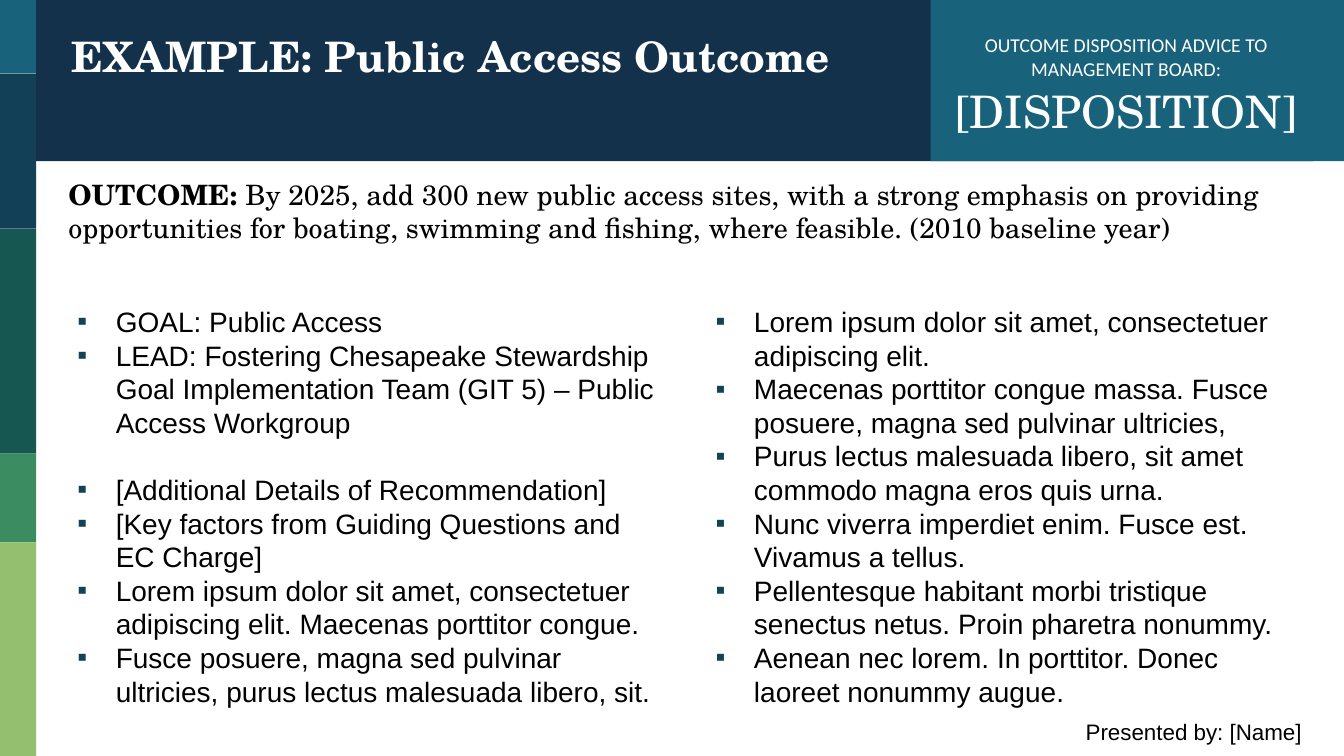
from dataclasses import dataclass

from lxml import etree
from pptx import Presentation
from pptx.dml.color import RGBColor
from pptx.enum.shapes import MSO_SHAPE
from pptx.enum.text import PP_ALIGN
from pptx.oxml.ns import qn
from pptx.util import Inches, Pt

RECT = MSO_SHAPE.RECTANGLE
LEFT, CENTER, RIGHT = PP_ALIGN.LEFT, PP_ALIGN.CENTER, PP_ALIGN.RIGHT


@dataclass(frozen=True)
class Theme:
    white: str = "FFFFFF"
    black: str = "000000"
    navy: str = "13314B"
    teal: str = "18637B"
    bullet: str = "114454"
    serif: str = "TeX Gyre Schola"
    sans: str = "Arial"
    label: str = "Calibri"
    title: int = 30
    rating: int = 32
    body: int = 20
    credit: int = 16
    small: int = 14


THEME = Theme()
STRIPES = (("18637B", 0.73), ("124057", 1.54), ("165751", 2.23),
           ("3B8D61", 0.88), ("94BF6E", 2.12))
PAD = (0.13, 0.07)
HEAD = {"line_spacing": 1.05, "space_after": Pt(13.3)}
ITEM = {"line_spacing": Pt(24)}
GAP = {"space_before": Pt(24)}

DETAILS = (
    ("GOAL: Public Access", {}),
    ("LEAD: Fostering Chesapeake Stewardship Goal Implementation Team "
     "(GIT 5) – Public Access Workgroup", {}),
    ("[Additional Details of Recommendation]", GAP),
    ("[Key factors from Guiding Questions and EC Charge]", {}),
    ("Lorem ipsum dolor sit amet, consectetuer adipiscing elit. "
     "Maecenas porttitor congue.", {}),
    ("Fusce posuere, magna sed pulvinar ultricies, purus lectus "
     "malesuada libero, sit.", {}),
)
FACTORS = (
    ("Lorem ipsum dolor sit amet, consectetuer adipiscing elit.", {}),
    ("Maecenas porttitor congue massa. Fusce posuere, magna sed "
     "pulvinar ultricies,", {}),
    ("Purus lectus malesuada libero, sit amet commodo magna eros "
     "quis urna.", {}),
    ("Nunc viverra imperdiet enim. Fusce est. Vivamus a tellus.", {}),
    ("Pellentesque habitant morbi tristique senectus netus. "
     "Proin pharetra nonummy.", {}),
    ("Aenean nec lorem. In porttitor. Donec laoreet nonummy augue.", {}),
)


def apply(target, values):
    for name, value in values.items():
        setattr(target, name, value)


def add_block(slide, box, color):
    block = slide.shapes.add_shape(RECT, *map(Inches, box))
    block.shadow.inherit = False
    block.fill.solid()
    block.fill.fore_color.rgb = RGBColor.from_string(color)
    block.line.fill.background()


def add_frame(slide, box, pad=(0.1, 0.05)):
    frame = slide.shapes.add_textbox(*map(Inches, box)).text_frame
    across, down = map(Inches, pad)
    apply(frame, {"word_wrap": True,
                  "margin_left": across, "margin_right": across,
                  "margin_top": down, "margin_bottom": down})
    return frame


def add_run(para, text, size, font, color, bold=False):
    run = para.add_run()
    run.text = text
    apply(run.font, {"size": Pt(size), "name": font, "bold": bold})
    run.font.color.rgb = RGBColor.from_string(color)


def add_text(slide, box, runs, pad=(0.1, 0.05), align=LEFT, style=None):
    """Add one paragraph made of runs of (text, size, font, color, bold)."""
    para = add_frame(slide, box, pad).paragraphs[0]
    apply(para, {"alignment": align, **(style or {})})
    for run in runs:
        add_run(para, *run)


def set_bullet(para):
    props = para._p.get_or_add_pPr()
    indent = Inches(0.38)
    props.set("marL", str(indent))
    props.set("indent", str(-indent))
    color = etree.SubElement(props, qn("a:buClr"))
    etree.SubElement(color, qn("a:srgbClr"), val=THEME.bullet)
    etree.SubElement(props, qn("a:buFont"), typeface=THEME.sans)
    etree.SubElement(props, qn("a:buChar"), char="▪")


def add_list(slide, box, items):
    frame = add_frame(slide, box, (0.1, 0.1))
    for index, (text, style) in enumerate(items):
        para = frame.add_paragraph() if index else frame.paragraphs[0]
        apply(para, {**ITEM, **style})
        set_bullet(para)
        add_run(para, text, THEME.body, THEME.sans, THEME.black)


def add_stripes(slide):
    top = 0
    for color, height in STRIPES:
        add_block(slide, (0, top, 0.36, height), color)
        top += height


def add_header(slide):
    add_block(slide, (0.36, 0, 12.67, 1.6), THEME.navy)
    add_text(slide, (0.58, 0.21, 8.5, 1.26),
             [("EXAMPLE: Public Access Outcome", THEME.title, THEME.serif,
               THEME.white, True)], PAD, style=HEAD)
    add_block(slide, (9.23, 0, 4.1, 1.6), THEME.teal)
    add_text(slide, (9.33, 0.24, 3.68, 1.18),
             [("OUTCOME DISPOSITION ADVICE TO MANAGEMENT BOARD: ",
               THEME.small, THEME.label, THEME.white),
              ("[DISPOSITION]", THEME.rating, THEME.serif, THEME.white)],
             PAD, CENTER, HEAD)


def main():
    deck = Presentation()
    apply(deck, {"slide_width": Inches(13.33), "slide_height": Inches(7.5)})
    slide = deck.slides.add_slide(deck.slide_layouts[6])
    add_stripes(slide)
    add_block(slide, (0.37, 1.59, 12.96, 0.9), THEME.white)
    add_header(slide)
    look = (THEME.body, THEME.serif, THEME.black)
    add_text(slide, (0.58, 1.71, 12.43, 1.09),
             [("OUTCOME: ", *look, True),
              ("By 2025, add 300 new public access sites, with a strong "
               "emphasis on providing opportunities for boating, swimming "
               "and fishing, where feasible. (2010 baseline year)", *look)])
    add_text(slide, (7.21, 7.08, 5.8, 0.37),
             [("Presented by: [Name]", THEME.credit, THEME.sans,
               THEME.black)], align=RIGHT)
    for left, items in ((0.67, DETAILS), (7, FACTORS)):
        add_list(slide, (left, 2.92, 6, 4.24), items)
    deck.save("out.pptx")


if __name__ == "__main__":
    main()
